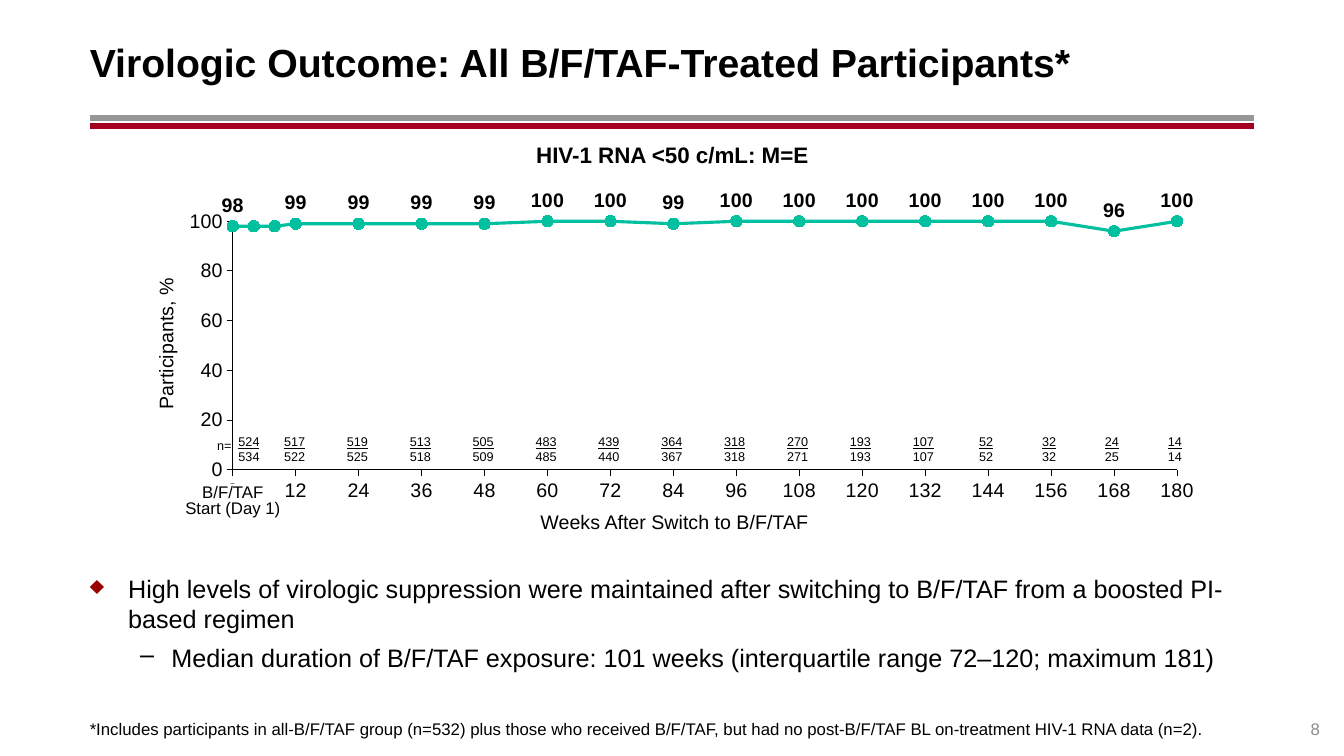
"""Build the virologic outcome slide."""
from dataclasses import dataclass

from lxml import etree
from pptx import Presentation
from pptx.chart.data import XyChartData
from pptx.chart.datalabel import DataLabels
from pptx.dml.color import RGBColor
from pptx.enum.chart import (XL_CHART_TYPE, XL_LABEL_POSITION, XL_MARKER_STYLE,
                             XL_TICK_LABEL_POSITION, XL_TICK_MARK)
from pptx.enum.shapes import MSO_CONNECTOR, MSO_SHAPE
from pptx.enum.text import MSO_ANCHOR, MSO_AUTO_SIZE, PP_ALIGN
from pptx.oxml import parse_xml
from pptx.oxml.ns import nsdecls, qn
from pptx.util import Inches, Pt

WIDTH, HEIGHT = Inches(13.33), Inches(7.5)
FONT = "Arial"
BLACK = RGBColor(0x00, 0x00, 0x00)
WHITE = RGBColor(0xFF, 0xFF, 0xFF)
GRAY = RGBColor(0x96, 0x96, 0x96)
PALE_GRAY = RGBColor(0x8C, 0x8C, 0x8C)
CRIMSON = RGBColor(0xA5, 0x00, 0x21)
DARK_RED = RGBColor(0x99, 0x00, 0x00)
TEAL = RGBColor(0x00, 0xC0, 0xA0)
LEFT, CENTER, RIGHT = PP_ALIGN.LEFT, PP_ALIGN.CENTER, PP_ALIGN.RIGHT
TOP, MIDDLE, BOTTOM = MSO_ANCHOR.TOP, MSO_ANCHOR.MIDDLE, MSO_ANCHOR.BOTTOM
STRAIGHT, RECTANGLE = MSO_CONNECTOR.STRAIGHT, MSO_SHAPE.RECTANGLE
SCATTER_LINES, CIRCLE = XL_CHART_TYPE.XY_SCATTER_LINES, XL_MARKER_STYLE.CIRCLE
ABOVE, LOW = XL_LABEL_POSITION.ABOVE, XL_TICK_LABEL_POSITION.LOW
NO_TICK, OUTSIDE = XL_TICK_MARK.NONE, XL_TICK_MARK.OUTSIDE
NO_AUTOFIT = MSO_AUTO_SIZE.NONE
PLAIN_TABLE = "{2D5ABB26-0587-4C30-8999-92F81FD0307C}"

MARGIN, RIGHT_EDGE = 6.68, 93.33
WEEKS = [0, 4, 8, *range(12, 181, 12)]
PERCENTAGES = [98, 98, 98, 99, 99, 99, 99, 100, 100, 99, 100, 100, 100, 100, 100, 100, 96, 100]
UNLABELED_POINTS = (1, 2)
SUPPRESSED = [524, 517, 519, 513, 505, 483, 439, 364, 318, 270, 193, 107, 52, 32, 24, 14]
TOTALS = [534, 522, 525, 518, 509, 485, 440, 367, 318, 271, 193, 107, 52, 32, 25, 14]
COLUMN_SHARES = [1.58, 2.1] + [4.68] * 15


def across(share: float) -> int:
    """Return a percentage of the slide width."""
    return round(WIDTH * share / 100)


def down(share: float) -> int:
    """Return a percentage of the slide height."""
    return round(HEIGHT * share / 100)


@dataclass(frozen=True)
class Box:
    """A frame in percentages of the slide size."""
    left: float
    top: float
    width: float
    height: float

    def frame(self) -> tuple[int, int, int, int]:
        """Return the frame in slide units."""
        return across(self.left), down(self.top), across(self.width), down(self.height)


@dataclass(frozen=True)
class Label:
    """A text with its frame and format."""
    box: Box
    lines: tuple[str, ...]
    size: float
    align: PP_ALIGN = LEFT
    anchor: MSO_ANCHOR = TOP
    color: RGBColor = BLACK
    bold: bool = False
    rotation: float = 0
    spacing: float = 1.0
    wrap: bool = True
    inset: float = 0
    fill: RGBColor | None = None


@dataclass(frozen=True)
class Bullet:
    """A bullet mark with its indents in inches."""
    mark: str
    margin: float
    hanging: float
    color: RGBColor


TITLE = Label(Box(MARGIN, 2.4, 86.65, 11.47),
              ("Virologic Outcome: All B/F/TAF-Treated Participants*",),
              28, anchor=MIDDLE, bold=True, inset=0.05)
FINDINGS = Label(Box(MARGIN, 75.2, 86.8, 13.6), (
    "High levels of virologic suppression were maintained after switching to B/F/TAF from a boosted PI-based regimen",
    "Median duration of B/F/TAF exposure: 101 weeks (interquartile range 72–120; maximum 181)"),
    18, inset=0.05)
BULLETS = (Bullet("♦", 0.38, 0.38, DARK_RED), Bullet("–", 0.81, 0.31, BLACK))
LABELS = (
    Label(Box(MARGIN, 91.07, 86.65, 6.67),
          ("*Includes participants in all-B/F/TAF group (n=532) plus those who received B/F/TAF, "
           "but had no post-B/F/TAF BL on-treatment HIV-1 RNA data (n=2).",), 12, anchor=BOTTOM),
    Label(Box(RIGHT_EDGE, 92.4, 4.88, 5.33), ("8",), 12, RIGHT, BOTTOM, PALE_GRAY),
    Label(Box(39.53, 67.47, 21.31, 3.6), ("Weeks After Switch to B/F/TAF",), 14,
          CENTER, MIDDLE, spacing=0.9),
    Label(Box(6.15, 43.87, 12.38, 3.2), ("Participants, %",), 14, CENTER, rotation=270),
    Label(Box(15.15, 64, 4.35, 4.8), ("B/F/TAF", "Start (Day 1)"), 12, CENTER, MIDDLE,
          spacing=0.8, wrap=False, fill=WHITE),
    Label(Box(39.53, 18.67, 21, 3.6), ("HIV-1 RNA <50 c/mL: M=E",), 16, CENTER,
          bold=True, wrap=False),
)


def style_font(font, size: float, color: RGBColor = BLACK, bold: bool = False) -> None:
    """Apply the slide font."""
    font.name, font.size, font.bold = FONT, Pt(size), bold
    font.color.rgb = color


def write_label(shape, label: Label) -> None:
    """Fill a shape with a label's text."""
    shape.rotation = label.rotation
    frame = shape.text_frame
    frame.text = "\n".join(label.lines)
    frame.auto_size = NO_AUTOFIT
    frame.word_wrap, frame.vertical_anchor = label.wrap, label.anchor
    frame.margin_left = frame.margin_right = 0
    frame.margin_top = frame.margin_bottom = Inches(label.inset)
    for paragraph in frame.paragraphs:
        paragraph.alignment, paragraph.line_spacing = label.align, label.spacing
        style_font(paragraph.font, label.size, label.color, label.bold)


def add_label(slide, label: Label):
    """Add a label as a text box, or as a rectangle when filled."""
    if label.fill is None:
        shape = slide.shapes.add_textbox(*label.box.frame())
    else:
        shape = slide.shapes.add_shape(RECTANGLE, *label.box.frame())
        shape.shadow.inherit = False
        shape.fill.solid()
        shape.fill.fore_color.rgb = label.fill
        shape.line.fill.background()
    write_label(shape, label)
    return shape


def add_bullet(paragraph, bullet: Bullet) -> None:
    """Give a paragraph its bullet and hanging indent."""
    paragraph.space_before = Pt(6)
    properties = paragraph._p.get_or_add_pPr()
    properties.set("marL", str(Inches(bullet.margin)))
    properties.set("indent", str(-Inches(bullet.hanging)))
    color = parse_xml(f'<a:buClr {nsdecls("a")}><a:srgbClr val="{bullet.color}"/></a:buClr>')
    mark = parse_xml(f'<a:buChar {nsdecls("a")} char="{bullet.mark}"/>')
    font_properties = properties.find(qn("a:defRPr"))
    font_properties.addprevious(color)
    font_properties.addprevious(mark)


def add_rule(slide, top: float, color: RGBColor) -> None:
    """Add a horizontal rule under the title."""
    rule = slide.shapes.add_connector(STRAIGHT, across(MARGIN), down(top),
                                      across(RIGHT_EDGE), down(top))
    rule.line.color.rgb, rule.line.width = color, Pt(4.25)
    etree.SubElement(rule._element.spPr, qn("a:effectLst"))


def style_axis(axis, maximum: float, step: float) -> None:
    """Format an axis that starts at zero."""
    axis.minimum_scale, axis.maximum_scale, axis.major_unit = 0, maximum, step
    axis.has_major_gridlines = False
    axis.major_tick_mark, axis.minor_tick_mark = OUTSIDE, NO_TICK
    axis.format.line.color.rgb, axis.format.line.width = BLACK, Pt(0.75)
    style_font(axis.tick_labels.font, 14)


def add_outcome_chart(slide) -> None:
    """Add the line chart of suppression by week."""
    data = XyChartData()
    points = data.add_series("Series 1")
    for week, percentage in zip(WEEKS, PERCENTAGES):
        points.add_data_point(week, percentage)
    chart = slide.shapes.add_chart(SCATTER_LINES, *Box(13.28, 22.27, 77.64, 44.93).frame(), data).chart
    chart.has_legend = chart.has_title = False
    style_font(chart.font, 10)
    style_axis(chart.category_axis, 180, 12)
    style_axis(chart.value_axis, 100, 20)
    chart.category_axis.tick_label_position = LOW
    plot = chart.plots[0]
    plot.vary_by_categories = False
    series = plot.series[0]
    series.format.line.color.rgb, series.format.line.width = TEAL, Pt(2.25)
    series.marker.style, series.marker.size = CIRCLE, 8
    series.marker.format.fill.solid()
    series.marker.format.fill.fore_color.rgb = TEAL
    series.marker.format.line.color.rgb = TEAL
    label_element = series._element.get_or_add_dLbls()
    labels = DataLabels(label_element)
    labels.show_value, labels.position = True, ABOVE
    labels.number_format, labels.number_format_is_linked = "#,##0", False
    style_font(labels.font, 14, bold=True)
    for place, index in enumerate(UNLABELED_POINTS):
        label_element.insert(place, parse_xml(
            f'<c:dLbl {nsdecls("c")}><c:idx val="{index}"/><c:delete val="1"/></c:dLbl>'))
    plot_area = chart._chartSpace.chart.plotArea
    for layout in plot_area.findall(qn("c:layout")):
        plot_area.remove(layout)
    layout = etree.Element(qn("c:layout"))
    manual = etree.SubElement(layout, qn("c:manualLayout"))
    for tag, value in (("layoutTarget", "inner"), ("xMode", "edge"), ("yMode", "edge"),
                       ("x", "0.052"), ("y", "0.156"), ("w", "0.905"), ("h", "0.732")):
        etree.SubElement(manual, qn(f"c:{tag}")).set("val", value)
    plot_area.insert(0, layout)


def add_count_table(slide) -> None:
    """Add the row of participant counts."""
    texts = ["n="] + [f"{part}\n{total}" for part, total in zip(SUPPRESSED, TOTALS)]
    box = Box(15.9, 56.67, sum(COLUMN_SHARES), 4.67)
    table = slide.shapes.add_table(1, len(texts), *box.frame()).table
    table.first_row = table.horz_banding = False
    table._tbl.tblPr.find(qn("a:tableStyleId")).text = PLAIN_TABLE
    for column, share, cell, text in zip(table.columns, COLUMN_SHARES, table.rows[0].cells, texts):
        column.width = across(share)
        cell.fill.background()
        cell.margin_left = cell.margin_right = cell.margin_top = cell.margin_bottom = 0
        cell.text = text
        paragraphs = cell.text_frame.paragraphs
        cell.vertical_anchor = BOTTOM if len(paragraphs) > 1 else MIDDLE
        for paragraph in paragraphs:
            paragraph.alignment = CENTER
            style_font(paragraph.font, 9)
        if len(paragraphs) > 1:
            paragraphs[0].font.underline = True


def main() -> None:
    """Build and save the presentation."""
    presentation = Presentation()
    presentation.slide_width, presentation.slide_height = WIDTH, HEIGHT
    slide = presentation.slides.add_slide(presentation.slide_layouts.get_by_name("Title Only"))
    title = slide.shapes.title
    title.left, title.top, title.width, title.height = TITLE.box.frame()
    write_label(title, TITLE)
    add_rule(slide, 15.6, GRAY)
    add_rule(slide, 16.67, CRIMSON)
    findings = add_label(slide, FINDINGS)
    for paragraph, bullet in zip(findings.text_frame.paragraphs, BULLETS):
        add_bullet(paragraph, bullet)
    add_outcome_chart(slide)
    for label in LABELS:
        add_label(slide, label)
    add_count_table(slide)
    presentation.save("out.pptx")


if __name__ == "__main__":
    main()
